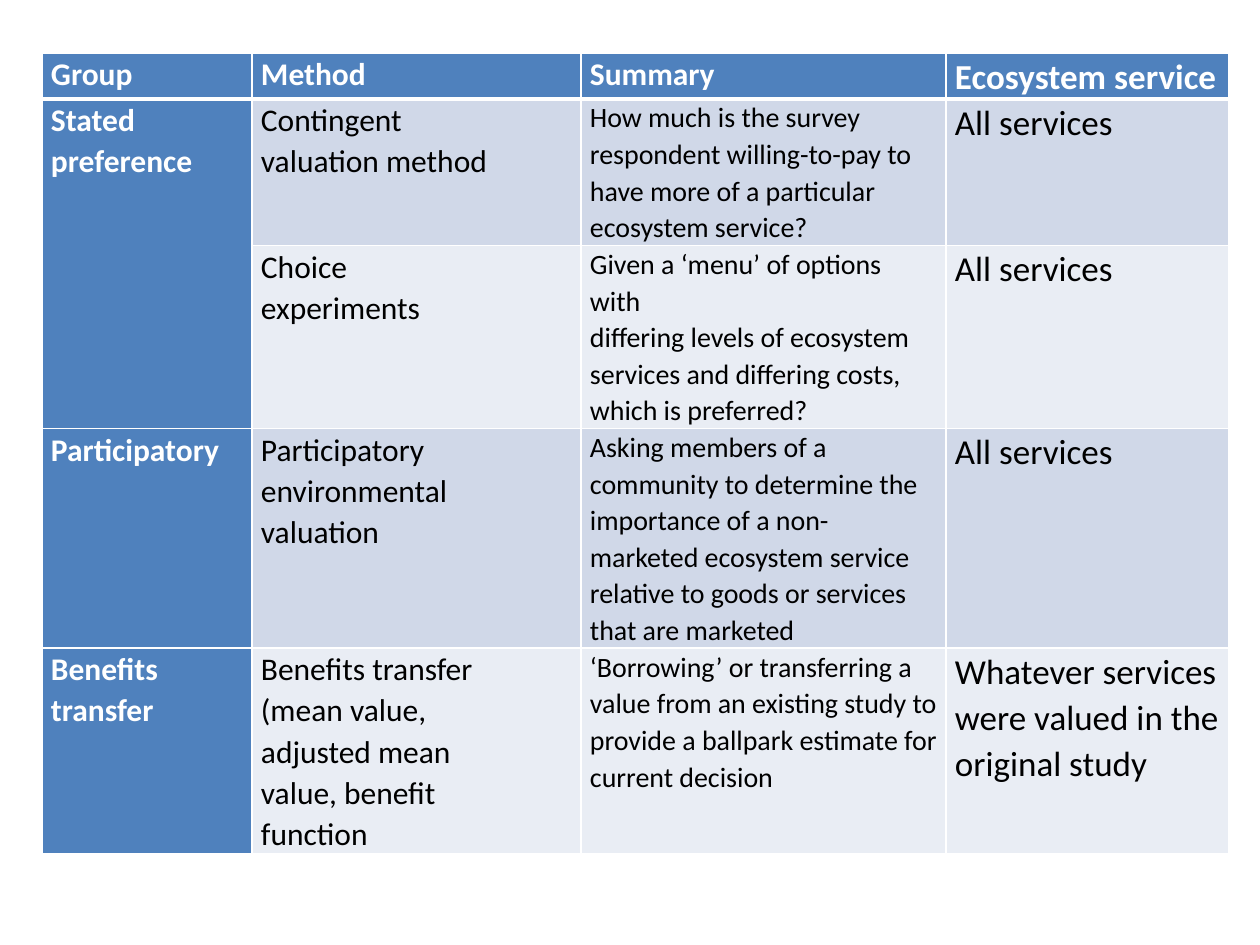
from lxml import etree
from pptx import Presentation
from pptx.dml.color import RGBColor
from pptx.oxml.ns import qn
from pptx.util import Emu, Pt

PX = 914400 / 126
FONT = "Calibri"
WHITE, BLACK, BLUE = "FFFFFF", "000000", "4F81BD"
BANDS = ("D0D8E8", "E9EDF4")

LEFT, TOP, FRAME_HEIGHT = 42, 53, 786
COLUMN_WIDTHS = (210, 329, 365, 283)
ROW_HEIGHTS = (33, 132, 132, 166, 166)
BODY_SIZES = (18, 18, 16, 20)
HEADER_SIZES = (18, 18, 18, 20)

# Each line of a cell is a paragraph; an empty group continues the one above
ROWS = (
    ("Group", "Method", "Summary", "Ecosystem service"),
    ("Stated\npreference",
     "Contingent\nvaluation method",
     "How much is the survey\nrespondent willing-to-pay to\n"
     "have more of a particular\necosystem service?",
     "All services"),
    ("",
     "Choice\nexperiments",
     "Given a ‘menu’ of options with\ndiffering levels of ecosystem\n"
     "services and differing costs,\nwhich is preferred?",
     "All services"),
    ("Participatory",
     "Participatory\nenvironmental\nvaluation",
     "Asking members of a community to determine the importance of a "
     "non-marketed ecosystem service relative to goods or services "
     "that are marketed",
     "All services"),
    ("Benefits\ntransfer",
     "Benefits transfer\n(mean value,\nadjusted mean\nvalue, benefit\nfunction",
     "‘Borrowing’ or transferring a\nvalue from an existing study to provide "
     "a ballpark estimate for current decision",
     "Whatever services\nwere valued in the\noriginal study"),
)


def px(length):
    return Emu(round(length * PX))


def color(value):
    return RGBColor.from_string(value)


def set_borders(cell, top, bottom):
    """Draw white lines round a cell; widths are in points."""
    properties = cell._tc.get_or_add_tcPr()
    for side, width in (("L", 1), ("R", 1), ("T", top), ("B", bottom)):
        line = etree.SubElement(properties, qn(f"a:ln{side}"), w=str(Pt(width)))
        fill = etree.SubElement(line, qn("a:solidFill"))
        etree.SubElement(fill, qn("a:srgbClr"), val=WHITE)


def set_text(cell, text, size, text_color, bold):
    cell.margin_left = cell.margin_right = px(9)
    cell.margin_top = cell.margin_bottom = 0
    cell.text_frame.text = text
    for para in cell.text_frame.paragraphs:
        para.line_spacing = 1.07
        para.font.size = Pt(size)
        for span in para.runs:
            span.font.name = FONT
            span.font.size = Pt(size)
            span.font.bold = bold
            span.font.color.rgb = color(text_color)


def style_cell(cell, row, column):
    heading = row == 0 or column == 0
    set_borders(cell, top=3 if row == 1 else 1, bottom=3 if row == 0 else 1)
    cell.fill.solid()
    cell.fill.fore_color.rgb = color(BLUE if heading else BANDS[(row - 1) % 2])
    size = (BODY_SIZES if row else HEADER_SIZES)[column]
    set_text(cell, ROWS[row][column], size, WHITE if heading else BLACK, heading)


def add_methods_table(page):
    frame = page.shapes.add_table(
        len(ROWS), len(COLUMN_WIDTHS), px(LEFT), px(TOP),
        px(sum(COLUMN_WIDTHS)), px(FRAME_HEIGHT))
    table = frame.table
    table.first_col = True
    for column, width in zip(table.columns, COLUMN_WIDTHS):
        column.width = px(width)
    for row, height in zip(table.rows, ROW_HEIGHTS):
        row.height = px(height)
    frame.height = px(FRAME_HEIGHT)

    for row in range(len(ROWS)):
        for column in range(len(COLUMN_WIDTHS)):
            style_cell(table.cell(row, column), row, column)

    # Stated preference covers two methods
    table.cell(1, 0).merge(table.cell(2, 0))


def main():
    deck = Presentation()
    deck.slide_width, deck.slide_height = px(1260), px(945)
    page = deck.slides.add_slide(deck.slide_layouts[6])
    add_methods_table(page)
    deck.save("out.pptx")


if __name__ == "__main__":
    main()
